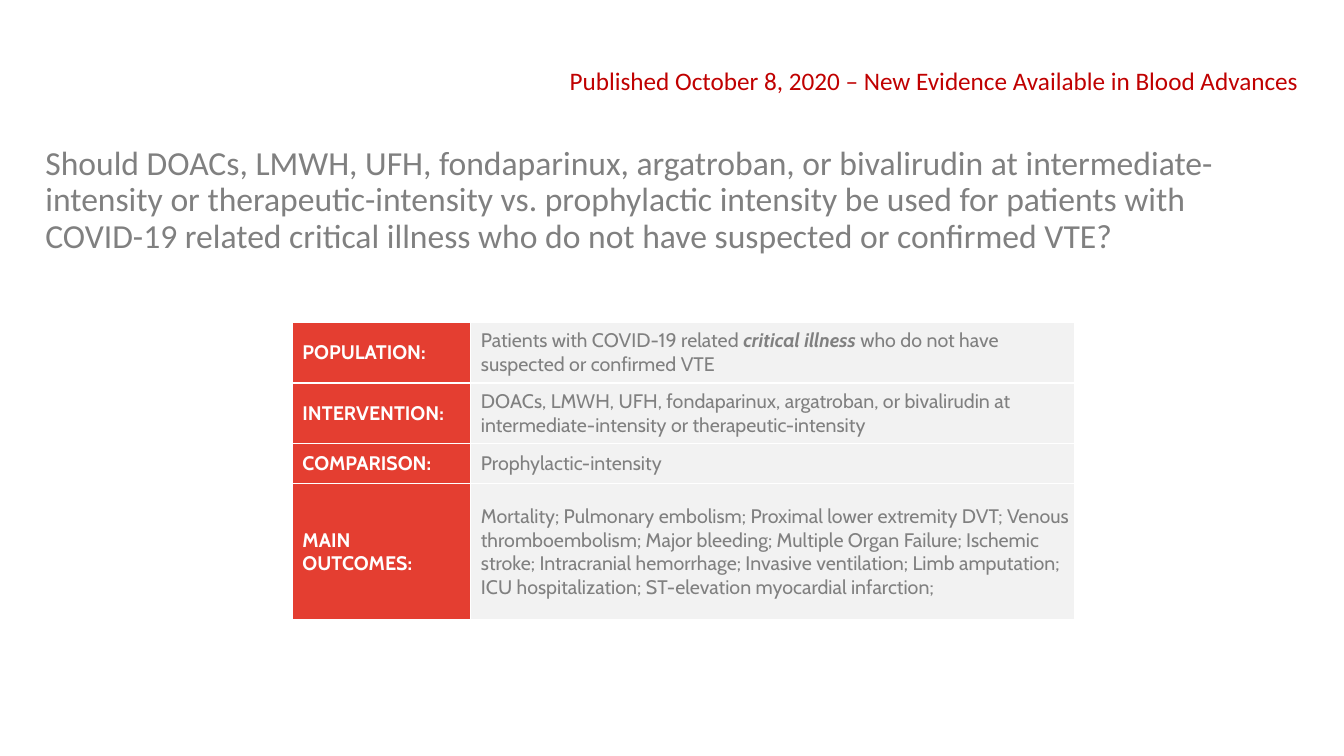
from lxml.etree import SubElement
from pptx import Presentation
from pptx.dml.color import RGBColor
from pptx.enum.text import MSO_ANCHOR
from pptx.oxml.ns import qn
from pptx.util import Inches, Pt

NOTICE = "Published October 8, 2020 – New Evidence Available in Blood Advances"
QUESTION = (
    "Should DOACs, LMWH, UFH, fondaparinux, argatroban, or bivalirudin at "
    "intermediate-intensity or therapeutic-intensity vs. prophylactic intensity "
    "be used for patients with COVID-19 related critical illness who do not have "
    "suspected or confirmed VTE?"
)
EMPHASIS = "critical illness"
# label, description, row height
PICO = [
    ("POPULATION:",
     "Patients with COVID-19 related critical illness who do not have "
     "suspected or confirmed VTE", 0.6),
    ("INTERVENTION:",
     "DOACs, LMWH, UFH, fondaparinux, argatroban, or bivalirudin at "
     "intermediate-intensity or therapeutic-intensity", 0.6),
    ("COMPARISON:", "Prophylactic-intensity", 0.4),
    ("MAIN OUTCOMES:",
     "Mortality; Pulmonary embolism; Proximal lower extremity DVT; "
     "Venous thromboembolism; Major bleeding; Multiple Organ Failure; "
     "Ischemic stroke; Intracranial hemorrhage; Invasive ventilation; Limb "
     "amputation; ICU hospitalization; ST-elevation myocardial infarction;", 1.35),
]
COLUMN_WIDTHS = (1.77, 5.99)

GREY, WHITE = "808080", "FFFFFF"
NOTICE_FONT = {"name": "Calibri", "size": Pt(18), "color": "C00000"}
QUESTION_FONT = {"name": "Calibri", "size": Pt(24), "color": GREY}
LABEL_FONT = {"name": "Cabin", "size": Pt(14), "color": WHITE, "bold": True}
DETAIL_FONT = {"name": "Cabin", "size": Pt(14), "color": GREY, "bold": False}
EMPHASIS_FONT = DETAIL_FONT | {"bold": True, "italic": True}


def paint(target, color):
    target.rgb = RGBColor.from_string(color)


def add_run(paragraph, text, style):
    run = paragraph.add_run()
    run.text = text
    for key, value in style.items():
        if key == "color":
            paint(run.font.color, value)
        else:
            setattr(run.font, key, value)


def add_text(slide, box, text, style, top_inset):
    frame = slide.shapes.add_textbox(*map(Inches, box)).text_frame
    frame.word_wrap = True
    frame.margin_left = frame.margin_right = frame.margin_bottom = 0
    frame.margin_top = Inches(top_inset)
    paragraph = frame.paragraphs[0]
    add_run(paragraph, text, style)
    return paragraph


def format_cell(cell, fill, right_margin):
    cell.margin_left, cell.margin_right = Inches(0.1), Inches(right_margin)
    cell.margin_top = cell.margin_bottom = 0
    cell.vertical_anchor = MSO_ANCHOR.MIDDLE
    properties = cell._tc.get_or_add_tcPr()
    for side in ("lnL", "lnR", "lnT", "lnB"):
        border = SubElement(properties, qn(f"a:{side}"), w=str(Pt(1)))
        SubElement(SubElement(border, qn("a:solidFill")), qn("a:srgbClr"), val=WHITE)
    cell.fill.solid()
    paint(cell.fill.fore_color, fill)


def add_pico_table(slide):
    heights = [height for _, _, height in PICO]
    table = slide.shapes.add_table(
        len(PICO), len(COLUMN_WIDTHS), Inches(2.9), Inches(3.2),
        Inches(sum(COLUMN_WIDTHS)), Inches(sum(heights))).table
    table.first_row = table.horz_banding = False
    for column, width in zip(table.columns, COLUMN_WIDTHS):
        column.width = Inches(width)
    for row, (label, detail, height) in zip(table.rows, PICO):
        row.height = Inches(height)
        label_cell, detail_cell = row.cells
        format_cell(label_cell, "E43E31", 0.2)
        format_cell(detail_cell, "F2F2F2", 0)
        add_run(label_cell.text_frame.paragraphs[0], label, LABEL_FONT)
        paragraph = detail_cell.text_frame.paragraphs[0]
        before, emphasis, after = detail.partition(EMPHASIS)
        for text, style in ((before, DETAIL_FONT), (emphasis, EMPHASIS_FONT),
                            (after, DETAIL_FONT)):
            if text:
                add_run(paragraph, text, style)


def main():
    presentation = Presentation()
    presentation.slide_width, presentation.slide_height = Inches(13.33), Inches(7.5)
    slide = presentation.slides.add_slide(presentation.slide_layouts[6])
    question = add_text(slide, (0.45, 1.39, 11.6, 1.15), QUESTION, QUESTION_FONT, 0.06)
    question.line_spacing = Pt(25.9)
    add_pico_table(slide)
    add_text(slide, (5.65, 0.64, 7.4, 0.33), NOTICE, NOTICE_FONT, 0.01)
    presentation.save("out.pptx")


if __name__ == "__main__":
    main()
